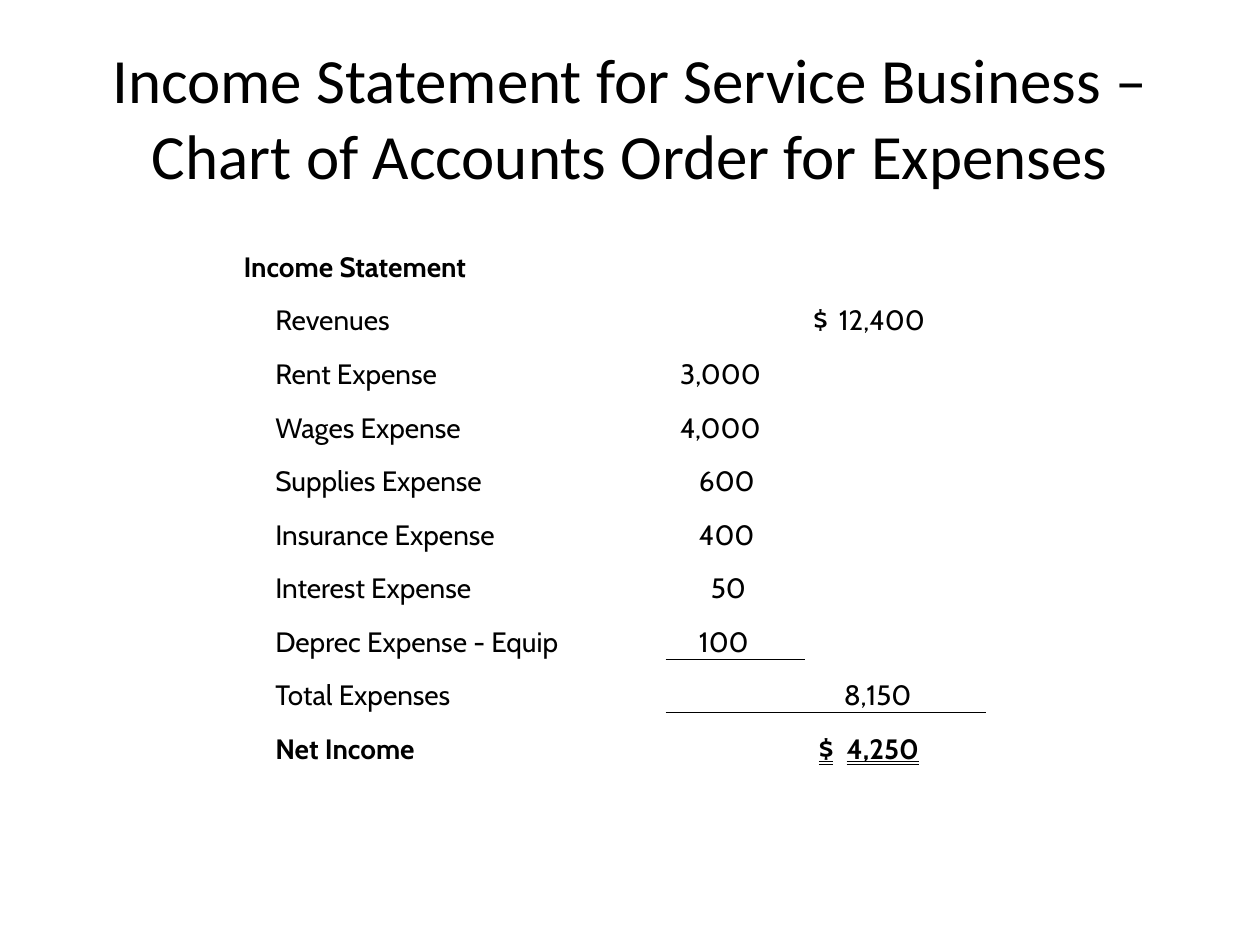
from dataclasses import dataclass

from lxml.etree import SubElement
from pptx import Presentation
from pptx.dml.color import RGBColor
from pptx.enum.text import MSO_ANCHOR, MSO_TEXT_UNDERLINE_TYPE, PP_ALIGN
from pptx.oxml import parse_xml
from pptx.oxml.ns import nsdecls, qn
from pptx.util import Cm, Pt


@dataclass(frozen=True)
class Theme:
    ink: str = "000000"
    title_font: str = "Calibri"
    body_font: str = "Cabin"
    title_size: int = 36
    body_size: int = 16
    rule_width: float = 0.5


theme = Theme()
NO_TABLE_STYLE = "{2D5ABB26-0587-4C30-8999-92F81FD0307C}"


def set_font(paragraph, name, size, bold=False):
    font = paragraph.font
    font.name, font.size, font.bold = name, Pt(size), bold
    font.color.rgb = RGBColor.from_string(theme.ink)


def add_rule(cell, side):
    cell._tc.get_or_add_tcPr().insert(0, parse_xml(
        f'<a:{side} {nsdecls("a")} w="{Pt(theme.rule_width)}"><a:solidFill>'
        f'<a:srgbClr val="{theme.ink}"/></a:solidFill></a:{side}>'))


presentation = Presentation()
presentation.slide_width, presentation.slide_height = Cm(25.4), Cm(19.05)
slide = presentation.slides.add_slide(presentation.slide_layouts[6])

# Title
heading = slide.shapes.add_textbox(Cm(1.27), Cm(0.76), Cm(22.86), Cm(3.18)).text_frame
heading.word_wrap = True
heading.vertical_anchor = MSO_ANCHOR.MIDDLE
heading.text = "Income Statement for Service Business – Chart of Accounts Order for Expenses"
heading.paragraphs[0].alignment = PP_ALIGN.CENTER
set_font(heading.paragraphs[0], theme.title_font, theme.title_size)

# Statement lines: label, amount column, amount, tab stops in cm
LABEL, DETAIL, TOTAL = 1, 2, 3
lines = [
    ("Revenues", TOTAL, "\t$\t12,400", (0.15, 0.66)),
    ("Rent Expense", DETAIL, "\t3,000", (0.26,)),
    ("Wages Expense", DETAIL, "\t4,000", (0.26,)),
    ("Supplies Expense", DETAIL, "\t600", (0.64,)),
    ("Insurance Expense", DETAIL, "\t400", (0.64,)),
    ("Interest Expense", DETAIL, "\t50", (0.88,)),
    ("Deprec Expense - Equip", DETAIL, "\t100", (0.64,)),
    ("Total Expenses", TOTAL, "\t8,150", (0.76,)),
    ("Net Income", TOTAL, "\t$\t4,250", (0.26, 0.82)),
]

# Empty statement grid
column_widths = [0.64, 7.9, 2.8, 3.66]
row_height = 1.08
row_count = len(lines) + 1
statement = slide.shapes.add_table(
    row_count, len(column_widths), Cm(4.88), Cm(4.65),
    Cm(sum(column_widths)), Cm(row_height * row_count)).table
statement.first_row = statement.horz_banding = False
statement._tbl.tblPr.find(qn("a:tableStyleId")).text = NO_TABLE_STYLE
for column, width in zip(statement.columns, column_widths):
    column.width = Cm(width)
for row in statement.rows:
    row.height = Cm(row_height)
for cell in statement.iter_cells():
    cell.fill.background()
    cell.vertical_anchor = MSO_ANCHOR.BOTTOM
    cell.margin_left = cell.margin_right = cell.margin_top = Cm(0.03)
    cell.margin_bottom = 0

# Statement heading
statement.cell(0, 0).merge(statement.cell(0, LABEL))
statement.cell(0, 0).text = "Income Statement"
set_font(statement.cell(0, 0).text_frame.paragraphs[0],
         theme.body_font, theme.body_size, bold=True)

# Labels and amounts
for row_index, (label, amount_column, amount, stops) in enumerate(lines, start=1):
    is_net = label == "Net Income"
    for column_index, wording in ((LABEL, label), (amount_column, amount)):
        cell = statement.cell(row_index, column_index)
        cell.text = wording
        entry = cell.text_frame.paragraphs[0]
        if column_index == amount_column:
            tab_list = SubElement(entry._p.get_or_add_pPr(), qn("a:tabLst"))
            for stop in stops:
                SubElement(tab_list, qn("a:tab"), pos=str(Cm(stop)), algn="l")
            if is_net:
                entry.font.underline = MSO_TEXT_UNDERLINE_TYPE.DOUBLE_LINE
        set_font(entry, theme.body_font, theme.body_size, bold=is_net)

# Sum rules under the last expense and under total expenses
for row_index, column_index in ((7, DETAIL), (8, TOTAL)):
    add_rule(statement.cell(row_index, column_index), "lnB")
    add_rule(statement.cell(row_index + 1, column_index), "lnT")

presentation.save("out.pptx")
